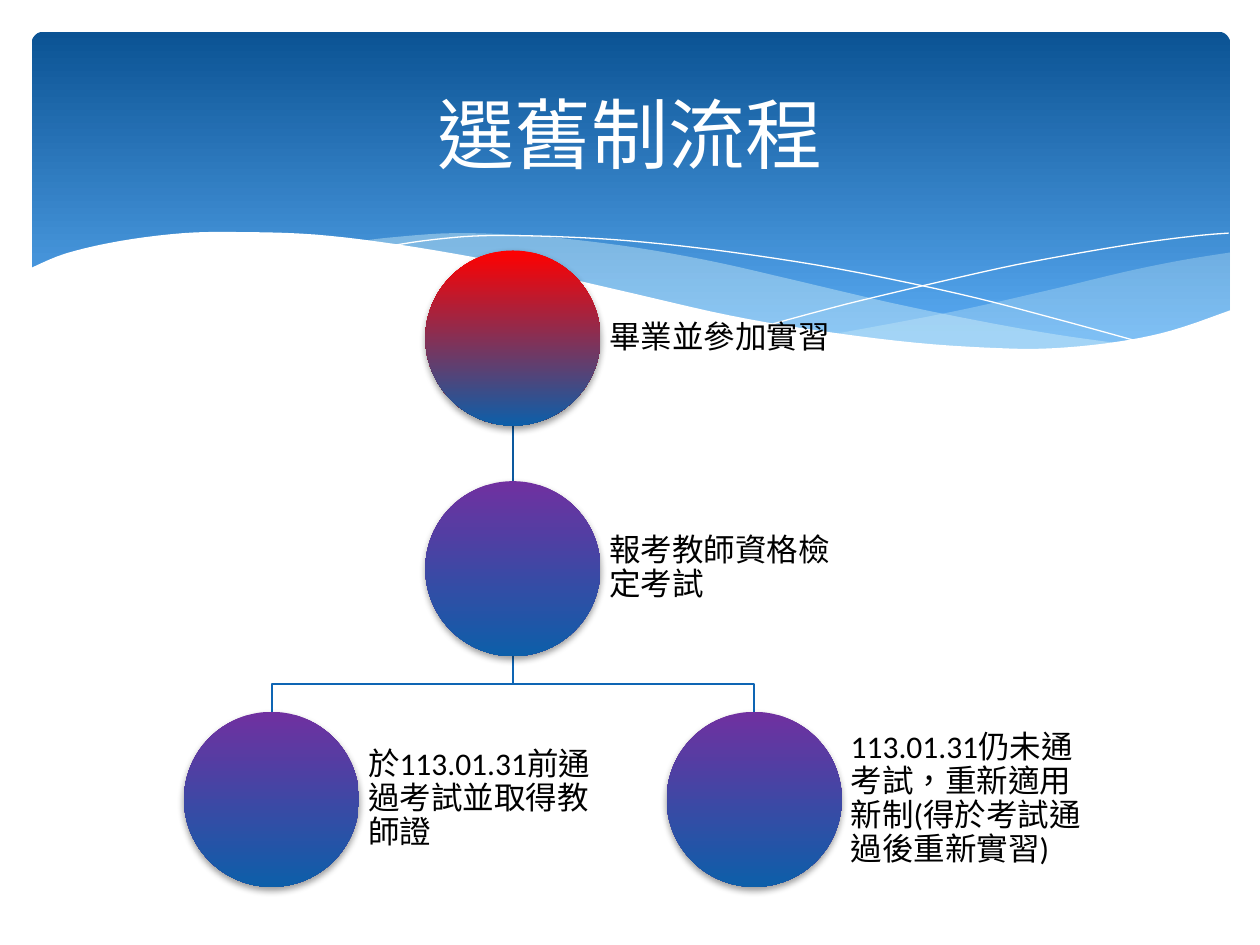
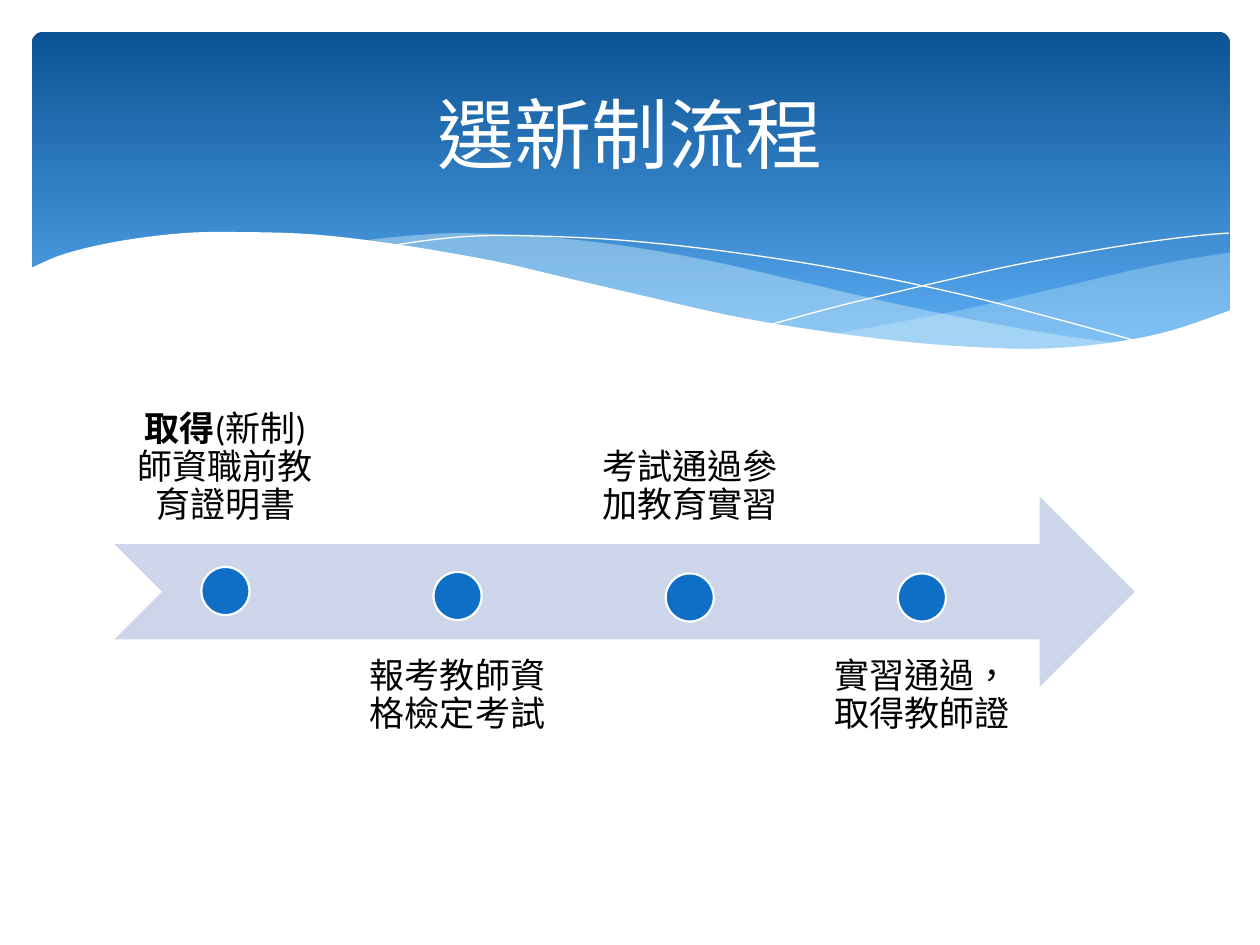
from typing import NamedTuple

from lxml import etree
from pptx import Presentation
from pptx.dml.color import RGBColor
from pptx.enum.shapes import MSO_CONNECTOR, MSO_SHAPE
from pptx.enum.text import MSO_ANCHOR, PP_ALIGN
from pptx.oxml.ns import qn
from pptx.util import Cm, Pt

WHITE = RGBColor(0xFF, 0xFF, 0xFF)
BLACK = RGBColor(0x00, 0x00, 0x00)
HEADER_TOP = RGBColor(0x0B, 0x53, 0x94)
HEADER_BOTTOM = RGBColor(0x59, 0xAA, 0xF2)
WAVE = RGBColor(0xDB, 0xF5, 0xF9)
RED = RGBColor(0xFF, 0x00, 0x00)
PURPLE = RGBColor(0x70, 0x30, 0xA0)
NODE_BOTTOM = RGBColor(0x0D, 0x5F, 0xA9)
STEM = RGBColor(0x0C, 0x59, 0x9F)
BRANCH = RGBColor(0x0E, 0x65, 0xB4)
ARROW = RGBColor(0xCC, 0xD5, 0xEA)
DOT = RGBColor(0x0F, 0x6F, 0xC6)

TITLE_FONT = "Noto Sans CJK JP"
BODY_FONT = "Calibri"


class Box(NamedTuple):
    """A region of the slide, in centimetres."""
    left: float
    top: float
    width: float
    height: float

    def inner(self, x, y, width, height):
        return Box(self.left + x, self.top + y, width, height)

    def lengths(self):
        return [Cm(value) for value in self]


HEADER = Box(0.64, 0.64, 24.16, 6.86)
TITLE = Box(1.27, 0.94, 22.86, 3.48)
TREE = Box(3.71, 5.05, 18.57, 12.83)
TIMELINE = Box(2.31, 10.01, 20.57, 3.84)

# Header curves, in centimetres from the corner of the header
RIGHT_WAVE = [
    [(24.16, 4.45), (23.11, 4.62), (22, 4.85), (20.5, 5.21), (18.49, 5.66),
     (16.15, 6.1)],
    [(16.15, 6.1), (17.27, 6.25), (18.59, 6.38), (19.76, 6.43), (21.06, 6.38),
     (22.35, 6.2), (23.29, 5.94), (24.16, 5.64)],
]
MIDDLE_WAVE = [
    [(22.05, 6.3), (20.62, 6.1), (19.05, 5.82), (17.3, 5.46), (15.34, 5),
     (13.82, 4.65), (12.42, 4.39), (11.18, 4.22), (10.03, 4.11), (8.53, 4.06),
     (7.32, 4.14), (6.63, 4.22)],
    [(6.63, 4.22), (8.05, 4.42), (9.63, 4.72), (10.77, 5), (12.83, 5.46),
     (14.63, 5.84), (16.26, 6.12), (17.7, 6.32), (19, 6.4), (20.14, 6.43),
     (21.13, 6.4), (22.05, 6.3)],
]
FALLING_LINE = [
    [(7.21, 4.32), (8.1, 4.19), (9.19, 4.11), (10.8, 4.14), (12.32, 4.24),
     (14.15, 4.45), (16.26, 4.78), (18.67, 5.28), (20.47, 5.74), (22.4, 6.27)],
]
RISING_LINE = [
    [(14.94, 5.89), (16.43, 5.49), (18.36, 5.03), (19.84, 4.7), (21.36, 4.42),
     (22.48, 4.24), (23.52, 4.11), (24.13, 4.06)],
]
WHITE_EDGE = [
    [(-0.05, 4.78), (0.69, 4.47), (1.78, 4.22), (3.07, 4.06), (4.27, 4.04),
     (5.72, 4.09), (7.39, 4.29), (9.3, 4.62), (10.72, 4.95), (12.14, 5.28),
     (14.07, 5.72), (15.82, 6.02), (17.81, 6.27), (19.51, 6.38),
     (20.62, 6.38), (21.89, 6.25), (22.99, 6.02), (24.18, 5.61)],
    [(24.18, 7.72), (-0.05, 7.72)],
]


def smooth(points, steps=5):
    """Catmull-Rom curve through the points; two points stay a straight line."""
    if len(points) < 3:
        return points
    padded = [points[0], *points, points[-1]]
    curve = [points[0]]
    for a, b, c, d in zip(padded, padded[1:], padded[2:], padded[3:]):
        for step in range(1, steps + 1):
            t = step / steps
            curve.append(tuple(
                0.5 * (2 * q + (r - p) * t + (2 * p - 5 * q + 4 * r - s) * t ** 2
                       + (3 * q - p - 3 * r + s) * t ** 3)
                for p, q, r, s in zip(a, b, c, d)))
    return curve


def paint(shape, fill=None, alpha=None, line=None, line_width=1.25):
    """Set fill and line; a pair of colours as fill runs from top to bottom."""
    shape.shadow.inherit = False
    if fill is None:
        shape.fill.background()
    elif isinstance(fill, RGBColor):
        shape.fill.solid()
        shape.fill.fore_color.rgb = fill
    else:
        shape.fill.gradient()
        shape.fill.gradient_angle = 270
        for stop, color in zip(shape.fill.gradient_stops, fill):
            stop.color.rgb = color
    if alpha is not None:
        color = shape._element.spPr.find(qn("a:solidFill"))[0]
        etree.SubElement(color, qn("a:alpha"), val=str(alpha * 1000))
    if line is None:
        shape.line.fill.background()
    else:
        shape.line.color.rgb = line
        shape.line.width = Pt(line_width)


def add_preset(slide, kind, box, **look):
    shape = slide.shapes.add_shape(kind, *box.lengths())
    paint(shape, **look)
    return shape


def add_outline(slide, box, points, close=False, **look):
    start, *rest = [(Cm(box.left + x), Cm(box.top + y)) for x, y in points]
    builder = slide.shapes.build_freeform(*start)
    builder.add_line_segments(rest, close=close)
    paint(builder.convert_to_shape(), **look)


def add_text(slide, box, text, bold_start="", size=18, font=BODY_FONT,
             color=BLACK, align=PP_ALIGN.LEFT, anchor=MSO_ANCHOR.MIDDLE,
             inset=0.18, spacing=0.9):
    frame = slide.shapes.add_textbox(*box.lengths()).text_frame
    frame.word_wrap = True
    frame.vertical_anchor = anchor
    frame.margin_left = frame.margin_right = Cm(inset)
    frame.margin_top = frame.margin_bottom = Cm(inset)
    paragraph = frame.paragraphs[0]
    paragraph.alignment = align
    paragraph.line_spacing = spacing
    for words, bold in ((bold_start, True), (text, False)):
        if not words:
            continue
        run = paragraph.add_run()
        run.text = words
        run.font.size = Pt(size)
        run.font.bold = bold
        run.font.name = font
        run.font.color.rgb = color
        properties = run._r.get_or_add_rPr()
        properties.set("lang", "zh-TW")
        etree.SubElement(properties, qn("a:ea"), typeface=font)


def add_soft_shadow(shape):
    effects = shape._element.spPr.find(qn("a:effectLst"))
    shadow = etree.SubElement(effects, qn("a:outerShdw"), blurRad=str(Pt(4)),
                              dist=str(Pt(2)), dir="5400000", rotWithShape="0")
    color = etree.SubElement(shadow, qn("a:srgbClr"), val=str(BLACK))
    etree.SubElement(color, qn("a:alpha"), val="38000")


def add_header(slide, box):
    band = add_preset(slide, MSO_SHAPE.ROUNDED_RECTANGLE, box,
                      fill=(HEADER_TOP, HEADER_BOTTOM))
    band.adjustments[0] = 0.034
    band.fill.gradient_stops[1].position = 0.9
    hairline = dict(line=WHITE, line_width=0)
    for curves, look in (
        (RIGHT_WAVE, dict(close=True, fill=WAVE, alpha=29)),
        (MIDDLE_WAVE, dict(close=True, fill=WAVE, alpha=40)),
        (FALLING_LINE, hairline),
        (RISING_LINE, hairline),
        (WHITE_EDGE, dict(close=True, fill=WHITE)),
    ):
        points = [point for curve in curves for point in smooth(curve)]
        add_outline(slide, box, points, **look)


def add_titled_slide(deck, title):
    slide = deck.slides.add_slide(deck.slide_layouts[6])
    add_header(slide, HEADER)
    add_text(slide, TITLE, title, size=44, font=TITLE_FONT, color=WHITE,
             align=PP_ALIGN.CENTER, inset=0.13, spacing=1.0)
    return slide


def add_tree(slide, box, steps):
    """Draw steps given as (column, row, top colour, label)."""
    diameter, label_width = 3.53, 5.31
    column_pitch = (box.width - diameter - label_width) / 2
    row_pitch = (box.height - diameter) / 2
    middle = column_pitch + diameter / 2
    fork_top, fork_bottom = row_pitch + diameter, 2 * row_pitch
    fork_middle = (fork_top + fork_bottom) / 2
    for side in (1, -1):
        end = middle + side * column_pitch
        add_outline(slide, box, [(middle, fork_top), (middle, fork_middle),
                                 (end, fork_middle), (end, fork_bottom)],
                    line=BRANCH)
    stem_x = Cm(box.left + middle)
    stem = slide.shapes.add_connector(
        MSO_CONNECTOR.STRAIGHT, stem_x, Cm(box.top + diameter),
        stem_x, Cm(box.top + row_pitch))
    stem.line.color.rgb = STEM
    stem.line.width = Pt(1.25)
    etree.SubElement(stem._element.spPr, qn("a:effectLst"))
    for column, row, color, label in steps:
        x, y = column * column_pitch, row * row_pitch
        node = add_preset(slide, MSO_SHAPE.OVAL,
                          box.inner(x, y, diameter, diameter),
                          fill=(color, NODE_BOTTOM))
        add_soft_shadow(node)
        add_text(slide, box.inner(x + diameter, y, label_width, diameter), label)


def add_timeline(slide, box, milestones):
    """Draw milestones given as (dot top, bold start, label), above and below."""
    label_width, pitch, label_shift, dot = 4.47, 4.68, 2.87, 0.97
    add_preset(slide, MSO_SHAPE.NOTCHED_RIGHT_ARROW, box, fill=ARROW)
    for index, (dot_top, bold_start, label) in enumerate(milestones):
        x = index * pitch
        above = index % 2 == 0
        add_text(slide,
                 box.inner(x, -label_shift if above else label_shift,
                           label_width, box.height),
                 label, bold_start=bold_start, size=20, inset=0.4,
                 align=PP_ALIGN.CENTER,
                 anchor=MSO_ANCHOR.BOTTOM if above else MSO_ANCHOR.TOP)
        add_preset(slide, MSO_SHAPE.OVAL,
                   box.inner(x + (label_width - dot) / 2, dot_top, dot, dot),
                   fill=DOT, line=WHITE)


def main():
    deck = Presentation()
    deck.slide_width, deck.slide_height = Cm(25.4), Cm(19.05)

    add_tree(add_titled_slide(deck, "選舊制流程"), TREE, [
        (1, 0, RED, "畢業並參加實習"),
        (1, 1, PURPLE, "報考教師資格檢定考試"),
        (0, 2, PURPLE, "於113.01.31前通過考試並取得教師證"),
        (2, 2, PURPLE, "113.01.31仍未通考試，重新適用新制(得於考試通過後重新實習)"),
    ])
    add_timeline(add_titled_slide(deck, "選新制流程"), TIMELINE, [
        (1.42, "取得", "(新制)師資職前教育證明書"),
        (1.52, "", "報考教師資格檢定考試"),
        (1.55, "", "考試通過參加教育實習"),
        (1.55, "", "實習通過，取得教師證"),
    ])
    deck.save("out.pptx")


if __name__ == "__main__":
    main()
